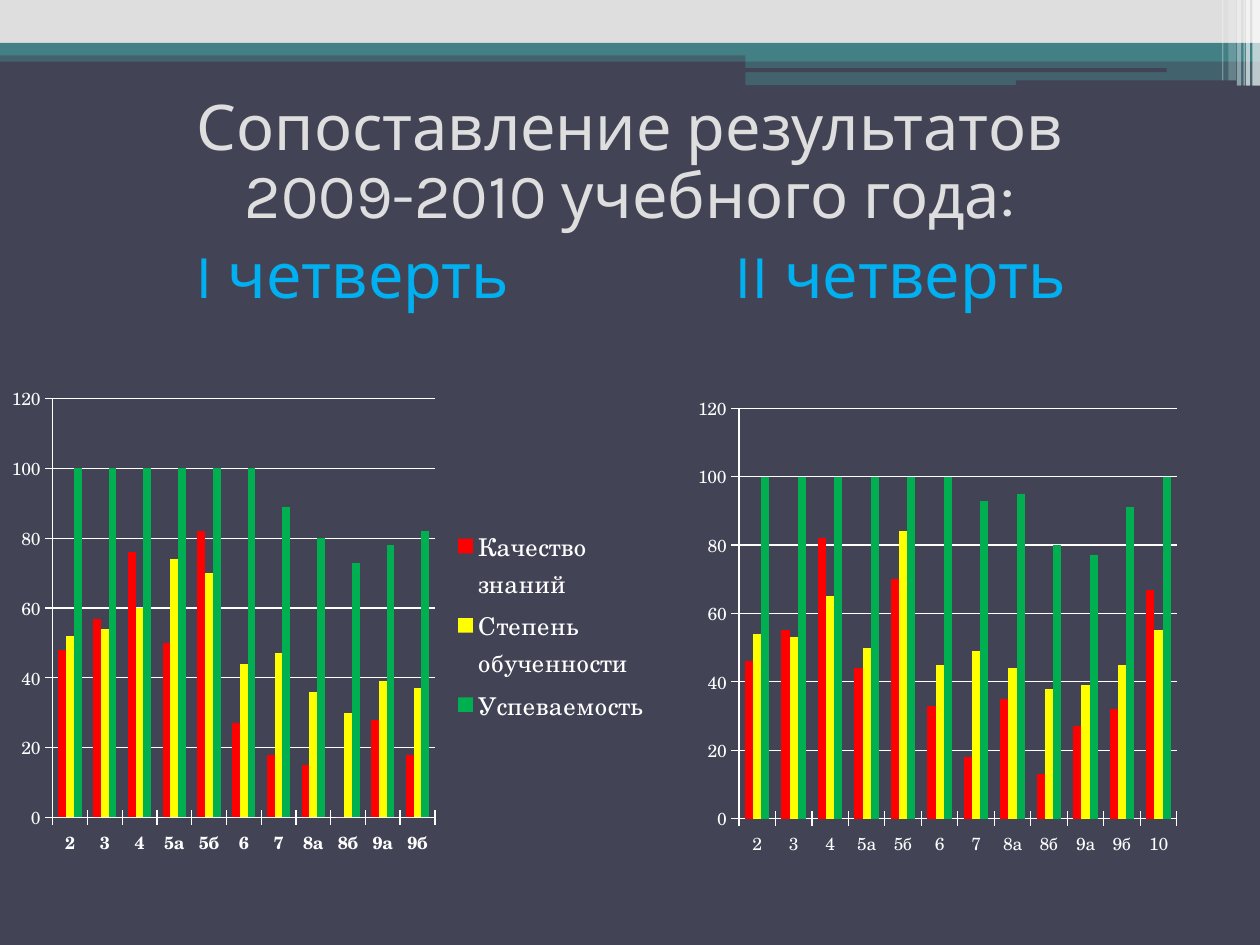
"""Build the slide that compares school results of two quarters in 2009-2010."""
from dataclasses import dataclass

from lxml import etree
from pptx import Presentation
from pptx import util as u
from pptx.chart.data import CategoryChartData
from pptx.dml.color import RGBColor
from pptx.enum import chart as ch, shapes, text
from pptx.oxml import parse_xml
from pptx.oxml.ns import nsdecls, qn


@dataclass(frozen=True)
class Theme:
    dark: str = "424456"
    teal: str = "438086"
    light: str = "DEDEDE"
    white: str = "FFFFFF"
    accent: str = "00B0F0"
    series: tuple = ("FF0000", "FFFF00", "00B050")
    title_font: str = "Karla"
    chart_font: str = "TeX Gyre Schola"
    title_size: int = 36
    legend_size: int = 14
    axis_size: int = 10


@dataclass(frozen=True)
class Box:
    x: float
    y: float
    w: float
    h: float

    def pts(self) -> list:
        return [u.Pt(v) for v in (self.x, self.y, self.w, self.h)]


@dataclass(frozen=True)
class Band:
    box: Box
    color: str
    alpha: int = 100
    rounded: bool = False


@dataclass(frozen=True)
class Label:
    box: Box
    lines: tuple
    color: str
    align: text.PP_ALIGN


@dataclass(frozen=True)
class Quarter:
    box: Box
    plot: Box
    cats: tuple
    values: tuple
    bold_cats: bool = False
    legend: Box | None = None


T = Theme()
NAMES = ("Качество знаний", "Степень обученности", "Успеваемость")
GRADES = ("2", "3", "4", "5а", "5б", "6", "7", "8а", "8б", "9а", "9б")

BANDS = [
    Band(Box(0, 28.8, 720, 6.5), T.teal, 50),
    Band(Box(0, 0, 720, 24.5), T.light),
    Band(Box(0, 24.5, 720, 7.2), T.teal),
    Band(Box(426, 28, 294, 7.2), T.teal),
    Band(Box(426, 35.2, 294, 13.5), T.teal, 50),
    Band(Box(425.5, 39, 241.2, 2.2), T.dark, rounded=True),
    Band(Box(580.5, 46, 126, 2.9), T.dark, rounded=True),
] + [
    Band(Box(x, 0, w, h), T.white, alpha)
    for x, w, h, alpha in (
        (715.7, 4.3, 49, 65), (712, 2.2, 49, 65), (710.6, 0.7, 49, 60),
        (707, 2.2, 49, 40), (702, 4.3, 46, 20), (698.4, 0.7, 46, 30))
]

LABELS = [
    Label(Box(36, 50, 648, 87),
          ("Сопоставление результатов", "2009-2010 учебного года:"),
          T.light, text.PP_ALIGN.CENTER),
    Label(Box(111.5, 137, 220, 43.5), ("I четверть",),
          T.accent, text.PP_ALIGN.LEFT),
    Label(Box(419.5, 137, 220, 43.5), ("II четверть",),
          T.accent, text.PP_ALIGN.LEFT),
]

QUARTERS = [
    Quarter(Box(0, 213.8, 376.6, 281.5), Box(0.08, 0.05, 0.58, 0.85), GRADES,
            ((48, 57, 76, 50, 82, 27, 18, 15, 0, 28, 18),
             (52, 54, 60, 74, 70, 44, 47, 36, 30, 39, 37),
             (100, 100, 100, 100, 100, 100, 89, 80, 73, 78, 82)),
            bold_cats=True, legend=Box(0.68, 0.3, 0.31, 0.42)),
    Quarter(Box(393.8, 219.6, 284.4, 275.8), Box(0.1, 0.05, 0.88, 0.85),
            GRADES + ("10",),
            ((46, 55, 82, 44, 70, 33, 18, 35, 13, 27, 32, 67),
             (54, 53, 65, 50, 84, 45, 49, 44, 38, 39, 45, 55),
             (100, 100, 100, 100, 100, 100, 93, 95, 80, 77, 91, 100))),
]


def rgb(color: str) -> RGBColor:
    """Turn a hex string into a colour."""
    return RGBColor.from_string(color)


def apply(target: object, values: dict) -> None:
    """Set each named attribute on the target."""
    for name, value in values.items():
        setattr(target, name, value)


def style_font(font: object, color: str, **values: object) -> None:
    """Give a font its colour and format values."""
    apply(font, values)
    font.color.rgb = rgb(color)


def add_band(s: object, band: Band) -> None:
    """Draw one filled band without an outline."""
    kind = shapes.MSO_SHAPE.ROUNDED_RECTANGLE if band.rounded else shapes.MSO_SHAPE.RECTANGLE
    sp = s.shapes.add_shape(kind, *band.box.pts())
    sp.shadow.inherit = False
    sp.line.fill.background()
    sp.fill.solid()
    sp.fill.fore_color.rgb = rgb(band.color)
    if band.alpha < 100:
        clr = sp.fill._xPr.find(".//" + qn("a:srgbClr"))
        etree.SubElement(clr, qn("a:alpha")).set("val", str(band.alpha * 1000))


def add_label(s: object, label: Label) -> None:
    """Draw a heading, one paragraph per line."""
    tf = s.shapes.add_textbox(*label.box.pts()).text_frame
    apply(tf, dict(word_wrap=True, vertical_anchor=text.MSO_ANCHOR.MIDDLE,
                   margin_left=0, margin_right=0, margin_top=0, margin_bottom=0))
    for i, line in enumerate(label.lines):
        p = tf.add_paragraph() if i else tf.paragraphs[0]
        apply(p, dict(alignment=label.align, line_spacing=0.9))
        r = p.add_run()
        r.text = line
        style_font(r.font, label.color, size=u.Pt(T.title_size), name=T.title_font)


def set_layout(parent: object, box: Box, after: str, inner: bool = False) -> None:
    """Fix a chart part at fractions of the chart area."""
    for old in parent.findall(qn("c:layout")):
        parent.remove(old)
    values = [("layoutTarget", "inner")] if inner else []
    values += [("xMode", "edge"), ("yMode", "edge")]
    values += [(k, getattr(box, k)) for k in "xywh"]
    items = "".join(f'<c:{k} val="{v}"/>' for k, v in values)
    layout = parse_xml(f'<c:layout {nsdecls("c")}><c:manualLayout>{items}'
                       '</c:manualLayout></c:layout>')
    previous = parent.find(qn(after)) if after else None
    parent.insert(0 if previous is None else parent.index(previous) + 1, layout)


def add_quarter(s: object, quarter: Quarter) -> None:
    """Draw the clustered columns of one quarter."""
    data = CategoryChartData()
    data.categories = quarter.cats
    for name, values in zip(NAMES, quarter.values):
        data.add_series(name, values)
    kind = ch.XL_CHART_TYPE.COLUMN_CLUSTERED
    chart = s.shapes.add_chart(kind, *quarter.box.pts(), data).chart
    apply(chart, dict(has_title=False, has_legend=quarter.legend is not None))
    style_font(chart.font, T.white, size=u.Pt(T.axis_size), name=T.chart_font)
    plot = chart.plots[0]
    apply(plot, dict(gap_width=150, overlap=0, vary_by_categories=False))
    for series, color in zip(plot.series, T.series):
        series.format.fill.solid()
        series.format.fill.fore_color.rgb = rgb(color)
    cat, val = chart.category_axis, chart.value_axis
    apply(val, dict(minimum_scale=0, maximum_scale=120, major_unit=20,
                    has_major_gridlines=True))
    for axis in (cat, val):
        axis.major_tick_mark = ch.XL_TICK_MARK.CROSS
        style_font(axis.tick_labels.font, T.white, size=u.Pt(T.axis_size),
                   name=T.chart_font, bold=axis is cat and quarter.bold_cats)
    for line in (cat.format.line, val.format.line, val.major_gridlines.format.line):
        line.width = u.Pt(0.75)
        line.color.rgb = rgb(T.white)
    set_layout(chart._chartSpace.chart.plotArea, quarter.plot, "", inner=True)
    if quarter.legend:
        apply(chart.legend, dict(position=ch.XL_LEGEND_POSITION.RIGHT, include_in_layout=False))
        style_font(chart.legend.font, T.white, size=u.Pt(T.legend_size), name=T.chart_font)
        set_layout(chart.legend._element, quarter.legend, "c:legendPos")


def main() -> None:
    """Build and save the slide."""
    prs = Presentation()
    apply(prs, dict(slide_width=u.Pt(720), slide_height=u.Pt(540)))
    s = prs.slides.add_slide(prs.slide_layouts[6])
    s.background.fill.solid()
    s.background.fill.fore_color.rgb = rgb(T.dark)
    for draw, items in ((add_band, BANDS), (add_label, LABELS), (add_quarter, QUARTERS)):
        for item in items:
            draw(s, item)
    prs.save("out.pptx")


if __name__ == "__main__":
    main()
